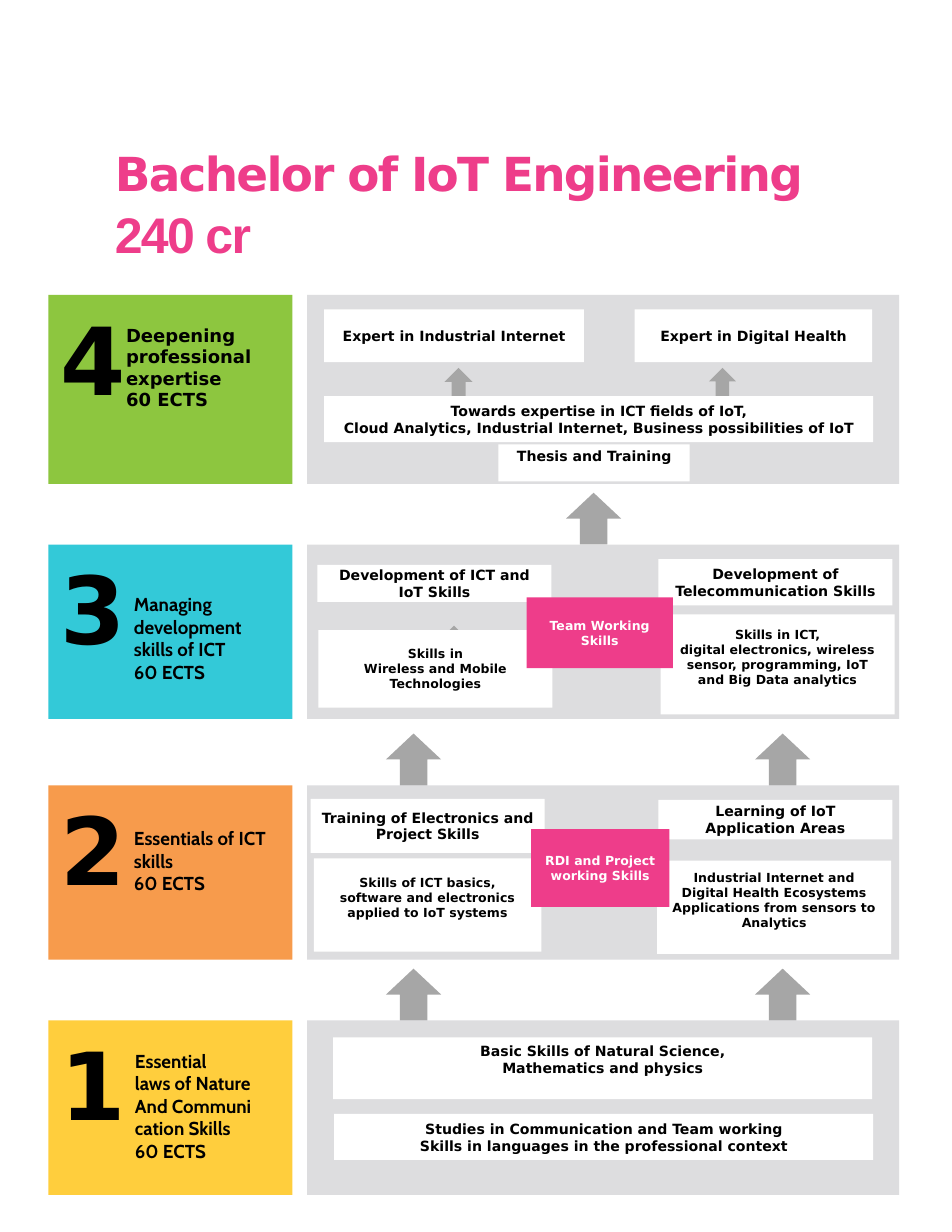
from pptx import Presentation
from pptx.dml.color import RGBColor
from pptx.enum.shapes import MSO_SHAPE
from pptx.enum.text import MSO_ANCHOR, MSO_AUTO_SIZE, PP_ALIGN
from pptx.util import Pt

PX = 9144
THEME = {
    "panel": "DDDDDF", "arrow": "A6A6A6", "card": "FFFFFF", "accent": "EE3D8A",
    "ink": "000000", "light": "FFFFFF",
    "green": "8DC63F", "cyan": "33C9D8", "orange": "F79B4C", "yellow": "FFCE3D",
    "sans": "DejaVu Sans", "label": "Cabin", "plain": "Arial",
    "title": 30, "credits": 32, "number": 60, "stage": 12, "top_stage": 11.5,
    "heading": 9, "detail": 8,
}


def write(sp, text, size, font="sans", color="ink", align=PP_ALIGN.LEFT,
          anchor=MSO_ANCHOR.TOP, margins=(0, 0, 0, 0), line=None, spc=0, append=False):
    tf = sp.text_frame
    tf.word_wrap = True
    tf.auto_size = MSO_AUTO_SIZE.NONE
    tf.vertical_anchor = anchor
    tf.margin_left, tf.margin_top, tf.margin_right, tf.margin_bottom = [m * PX for m in margins]
    for i, part in enumerate(text.split("\n")):
        p = tf.add_paragraph() if i else tf.paragraphs[0]
        p.alignment = align
        if line:
            p.line_spacing = line
        r = p.add_run()
        r.text = part
        r.font.size = Pt(THEME[size])
        r.font.name = THEME[font]
        r.font.bold = True
        r.font.color.rgb = RGBColor.from_string(THEME[color])
        if spc:
            r._r.get_or_add_rPr().set("spc", str(spc))


def add_block(kind, x, y, w, h, color):
    sp = slide.shapes.add_shape(kind, x * PX, y * PX, w * PX, h * PX)
    sp.shadow.inherit = False
    sp.fill.solid()
    sp.fill.fore_color.rgb = RGBColor.from_string(THEME[color])
    sp.line.fill.background()
    return sp


prs = Presentation()
prs.slide_width, prs.slide_height = 846 * PX, 1095 * PX
slide = prs.slides.add_slide(prs.slide_layouts[5])

title = slide.shapes.title
title.left, title.top, title.width, title.height = 102 * PX, 126 * PX, 670 * PX, 108 * PX
for text, size, font in [("Bachelor of IoT Engineering ", "title", "sans"),
                         ("240 cr", "credits", "plain")]:
    write(title, text, size, font, "accent", line=1.05, spc=-110)

stages = [
    ("4", 262, 168, "green", (112, 288, 139, 78), "top_stage", "sans",
     "Deepening professional expertise\n60 ECTS"),
    ("3", 484, 155, "cyan", (119, 527, 137, 98), "stage", "label",
     "Managing development\nskills of ICT\n60 ECTS"),
    ("2", 698, 155, "orange", (119, 735, 120, 78), "stage", "label",
     "Essentials of ICT skills\n60 ECTS"),
    ("1", 907, 155, "yellow", (120, 933, 136, 120), "stage", "label",
     "Essential\nlaws of Nature\nAnd Communi\ncation Skills\n60 ECTS"),
]
for number, y, h, color, label, size, font, text in stages:
    add_block(MSO_SHAPE.RECTANGLE, 273, y, 526, h, "panel")
    add_block(MSO_SHAPE.RECTANGLE, 43, y, 217, h, color)
    sp = slide.shapes.add_textbox(54 * PX, (y + 8) * PX, 49 * PX, 98 * PX)
    write(sp, number, "number", line=Pt(70.4), spc=-220)
    sp = slide.shapes.add_textbox(*[v * PX for v in label])
    write(sp, text, size, font)

arrows = [(x, y, 49, 46) for x in (343, 671) for y in (652, 861)]
arrows += [(503, 438, 49, 46), (395, 327, 25, 33), (630, 327, 24, 33), (392, 556, 23, 29)]
for x, y, w, h in arrows:
    add_block(MSO_SHAPE.UP_ARROW, x, y, w, h, "arrow")

cards = [
    (288, 275, 231, 47, "heading", 0, "Expert in Industrial Internet"),
    (564, 275, 211, 47, "heading", 0, "Expert in Digital Health"),
    (288, 352, 488, 41, "heading", 0,
     "Towards expertise in ICT fields of IoT,\n"
     "Cloud Analytics, Industrial Internet, Business possibilities of IoT"),
    (443, 395, 170, 33, "heading", 12, "Thesis and Training"),
    (282, 502, 208, 33, "heading", 0, "Development of ICT and\nIoT Skills"),
    (585, 497, 208, 41, "heading", 0, "Development of\nTelecommunication Skills"),
    (283, 560, 208, 69, "detail", 0, "Skills in\nWireless and Mobile\nTechnologies"),
    (587, 546, 208, 89, "detail", 13,
     "Skills in ICT,\ndigital electronics, wireless\nsensor, programming, IoT\n"
     "and Big Data analytics"),
    (276, 710, 208, 48, "heading", 0, "Training of Electronics and\nProject Skills"),
    (585, 711, 208, 35, "heading", 0, "Learning of IoT\nApplication Areas"),
    (279, 763, 202, 83, "detail", 13,
     "Skills of ICT basics,\nsoftware and electronics\napplied to IoT systems"),
    (584, 765, 208, 83, "detail", 13,
     "Industrial Internet and\nDigital Health Ecosystems\n"
     "Applications from sensors to\nAnalytics"),
    (296, 922, 479, 55, "heading", 15,
     "Basic Skills of Natural Science,\nMathematics and physics"),
    (297, 990, 479, 41, "heading", 0,
     "Studies in Communication and Team working\n"
     "Skills in languages in the professional context"),
]
links = [
    (468, 531, 130, 63, "detail", 0, "Team Working\nSkills"),
    (472, 737, 123, 69, "detail", 0, "RDI and Project\nworking Skills"),
]
for group, fill, ink in [(cards, "card", "ink"), (links, "accent", "light")]:
    for x, y, w, h, size, lift, text in group:
        sp = add_block(MSO_SHAPE.RECTANGLE, x, y, w, h, fill)
        write(sp, text, size, color=ink, align=PP_ALIGN.CENTER,
              anchor=MSO_ANCHOR.MIDDLE, margins=(10, 5, 10, 5 + lift))

prs.save("out.pptx")
